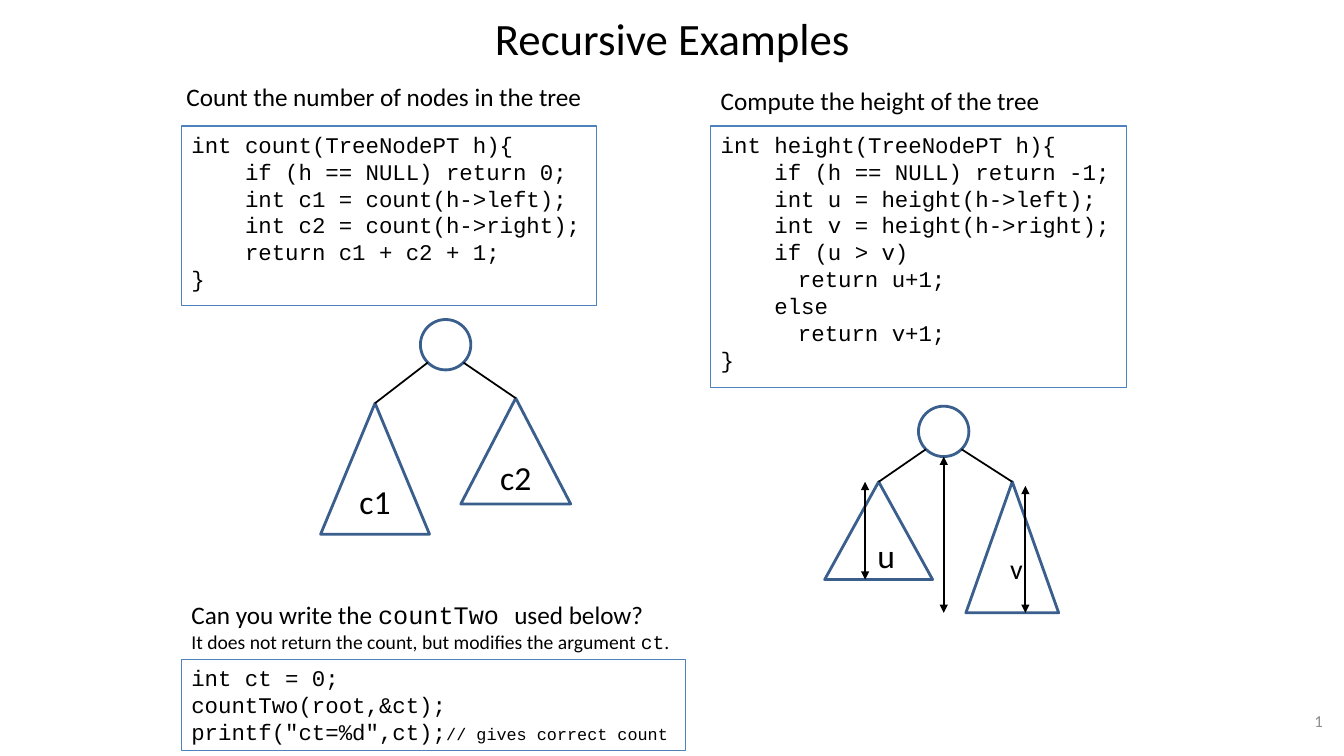
from lxml import etree
from pptx import Presentation
from pptx.dml.color import RGBColor
from pptx.enum.shapes import MSO_CONNECTOR, MSO_SHAPE
from pptx.enum.text import MSO_ANCHOR, PP_ALIGN
from pptx.oxml.ns import qn
from pptx.util import Inches, Pt

COLORS = {"text": "000000", "number": "8C8C8C", "frame": "4F81BD", "tree": "3A5F8C"}
SANS, MONO = "Calibri", "Courier New"
LEFT, CENTER, RIGHT = PP_ALIGN.LEFT, PP_ALIGN.CENTER, PP_ALIGN.RIGHT
TOP, MIDDLE = MSO_ANCHOR.TOP, MSO_ANCHOR.MIDDLE
RECTANGLE, OVAL = MSO_SHAPE.RECTANGLE, MSO_SHAPE.OVAL
TRIANGLE, STRAIGHT = MSO_SHAPE.ISOSCELES_TRIANGLE, MSO_CONNECTOR.STRAIGHT

NODE = 0.5  # diameter of a root node

COUNT_CODE = """int count(TreeNodePT h){
    if (h == NULL) return 0;
    int c1 = count(h->left);
    int c2 = count(h->right);
    return c1 + c2 + 1;
}"""
HEIGHT_CODE = """int height(TreeNodePT h){
    if (h == NULL) return -1;
    int u = height(h->left);
    int v = height(h->right);
    if (u > v)
\t  return u+1;
    else
\t  return v+1;
}"""


def code_lines(code):
    return [[(line, 16, MONO)] for line in code.splitlines()]


def style_font(font, size, name, color="text"):
    font.size, font.name = Pt(size), name
    font.color.rgb = RGBColor.from_string(COLORS[color])


def write(shape, lines, align=LEFT, anchor=TOP, color="text"):
    """Fill a shape with lines, each a list of (text, size, font) spans."""
    frame = shape.text_frame
    frame.word_wrap = True
    frame.vertical_anchor = anchor
    for index, line in enumerate(lines):
        para = frame.paragraphs[0] if index == 0 else frame.add_paragraph()
        para.alignment = align
        for text, size, name in line:
            span = para.add_run()
            span.text = text
            style_font(span.font, size, name, color)


def add_text(page, box, lines, align=LEFT, anchor=TOP, color="text"):
    label = page.shapes.add_textbox(*map(Inches, box))
    write(label, lines, align, anchor, color)
    return label


def add_outline(shapes, kind, box, color, width):
    shape = shapes.add_shape(kind, *map(Inches, box))
    shape.shadow.inherit = False
    shape.fill.background()
    shape.line.color.rgb = RGBColor.from_string(COLORS[color])
    shape.line.width = Pt(width)
    return shape


def add_line(shapes, start, end, width, arrows=False):
    line = shapes.add_connector(STRAIGHT, *map(Inches, (*start, *end)))
    line.line.color.rgb = RGBColor.from_string(COLORS["text"])
    line.line.width = Pt(width)
    properties = line._element.spPr
    if arrows:
        for tag in ("a:headEnd", "a:tailEnd"):
            etree.SubElement(properties.find(qn("a:ln")), qn(tag), type="triangle")
    etree.SubElement(properties, qn("a:effectLst"))


def add_code_box(page, box, lines):
    write(add_outline(page.shapes, RECTANGLE, box, "frame", 0.75), lines)


def add_tree(page, left, top, subtrees):
    """Root node at (left, top); subtrees are (box relative to it, label, left inset)."""
    shapes = page.shapes.add_group_shape().shapes
    add_outline(shapes, OVAL, (left, top, NODE, NODE), "tree", 2)
    reach = NODE / 2 * 0.71  # the edges leave the node at 45 degrees
    for side, ((x, y, width, height), label, inset) in zip((-1, 1), subtrees):
        box = (left + x, top + y, width, height)
        subtree = add_outline(shapes, TRIANGLE, box, "tree", 2)
        if label:
            frame = subtree.text_frame
            frame.margin_left, frame.margin_right = Inches(inset), 0
            write(subtree, [[(label, 24, SANS)]], CENTER, MIDDLE)
        start = (left + NODE / 2 + side * reach, top + NODE / 2 + reach)
        add_line(shapes, start, (box[0] + width / 2, box[1]), 1.25)


def add_header(page, box):
    add_text(page, box, [[("Recursive Examples", 32, SANS)]], CENTER, MIDDLE)


def add_page_number(page, box):
    label = add_text(page, box, [[("13", 12, SANS)]], RIGHT, MIDDLE, "number")
    # Turn the run into a live slide number
    span = label.text_frame.paragraphs[0].runs[0]._r
    span.tag = qn("a:fld")
    span.set("id", "{B6F15528-21DE-4FAA-801E-634DDDAF4B2B}")
    span.set("type", "slidenum")


def add_count_example(page, left, top):
    add_text(page, (left - 0.05, top, 4.28, 0.4),
             [[("Count the number of nodes in the tree", 18, SANS)]])
    add_code_box(page, (left, top + 0.49, 4.12, 1.78), code_lines(COUNT_CODE))
    add_tree(page, left + 2.37, top + 2.41, [
        ((-0.99, 0.83, 1.08, 1.3), "c1", 0),
        ((0.4, 0.78, 1.09, 1.05), "c2", 0),
    ])


def add_height_example(page, left, top):
    add_text(page, (left, top, 4.12, 0.4),
             [[("Compute the height of the tree", 18, SANS)]])
    add_code_box(page, (left, top + 0.45, 4.12, 2.59), code_lines(HEIGHT_CODE))
    add_tree(page, left + 2.06, top + 3.23, [
        ((-0.93, 0.75, 1.07, 0.97), "u", 0.15),
        ((0.47, 0.75, 0.92, 1.3), None, 0),
    ])
    add_text(page, (left + 2.87, top + 4.62, 0.33, 0.44), [[("v", 20, SANS)]])
    # Height arrows: left subtree, right subtree, whole tree
    for x, start, end in ((1.53, 3.98, 4.95), (3.12, 4.02, 5.28), (2.31, 3.73, 5.28)):
        add_line(page.shapes, (left + x, top + start), (left + x, top + end), 1.5, True)


def add_exercise(page, left, top):
    add_text(page, (left, top, 5, 0.64), [
        [("Can you write the ", 18, SANS), ("countTwo ", 18, MONO),
         ("used below?", 18, SANS)],
        [("It does not return the count, but modifies the argument ", 14, SANS),
         ("ct", 14, MONO), (".", 14, SANS)],
    ])
    lines = code_lines('int ct = 0;\ncountTwo(root,&ct);\nprintf("ct=%d",ct);')
    lines[-1].append(("// gives correct count", 12, MONO))
    add_code_box(page, (left, top + 0.64, 5, 0.91), lines)


def main():
    deck = Presentation()
    deck.slide_width, deck.slide_height = Inches(13.33), Inches(7.5)
    page = deck.slides.add_slide(deck.slide_layouts[6])
    add_header(page, (2.17, 0.08, 9, 0.58))
    add_count_example(page, 1.8, 0.76)
    add_height_example(page, 7.05, 0.8)
    add_exercise(page, 1.8, 5.9)
    add_page_number(page, (10.11, 6.95, 3.11, 0.4))
    deck.save("out.pptx")


if __name__ == "__main__":
    main()
